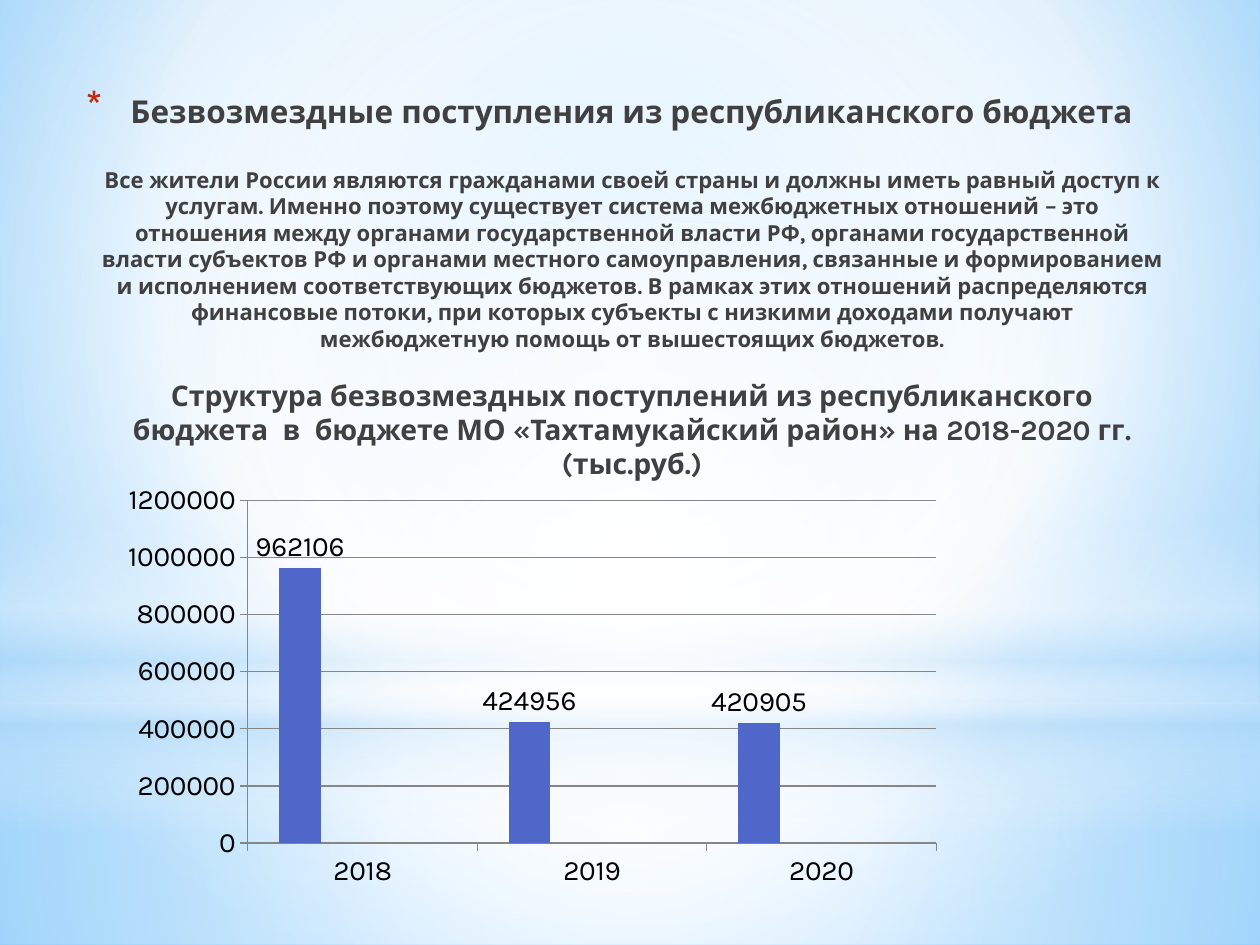
import pptx
import pptx.chart.data
import pptx.dml.color
import pptx.enum.chart
import pptx.enum.shapes
import pptx.enum.text
import pptx.oxml
import pptx.oxml.ns
import pptx.util
from pptx.dml.color import RGBColor
from pptx.util import Inches, Pt

FONT = "Karla"
TEXT = RGBColor(0x40, 0x40, 0x40)
BLACK = RGBColor(0x00, 0x00, 0x00)
AXIS = RGBColor(0x86, 0x86, 0x86)
BULLET = RGBColor(0xC3, 0x26, 0x0C)
WHITE = RGBColor(0xFF, 0xFF, 0xFF)
PALE_BLUE = RGBColor(0xB4, 0xDC, 0xFA)
SKY_BLUE = RGBColor(0x9E, 0xD5, 0xFF)
DEEP_BLUE = RGBColor(0x5B, 0xB9, 0xFF)
SERIES_COLORS = [
    RGBColor(0x4E, 0x67, 0xC8),
    RGBColor(0x5E, 0xCC, 0xF3),
    RGBColor(0xA7, 0xEA, 0x52),
    RGBColor(0x5D, 0xCE, 0xAF),
]
CENTER = (50, 50, 50, 50)


def apply_gradient(fill, element, stops, focus):
    """Fill with (position, colour, opacity) stops in percent.

    focus is the left, top, right, bottom inset of a circular gradient;
    None gives a vertical linear one.
    """
    fill.gradient()
    gradient = next(element.iter(pptx.oxml.ns.qn("a:gradFill")))
    stop_xml = "".join(
        f'<a:gs pos="{position * 1000}"><a:srgbClr val="{color}">'
        f'<a:alpha val="{opacity * 1000}"/></a:srgbClr></a:gs>'
        for position, color, opacity in stops
    )
    if focus:
        left, top, right, bottom = (inset * 1000 for inset in focus)
        direction = (
            f'<a:path path="circle"><a:fillToRect l="{left}" t="{top}" '
            f'r="{right}" b="{bottom}"/></a:path>'
        )
    else:
        direction = '<a:lin ang="5400000" scaled="0"/>'
    replacement = pptx.oxml.parse_xml(
        f'<a:gradFill {pptx.oxml.ns.nsdecls("a")} rotWithShape="1">'
        f"<a:gsLst>{stop_xml}</a:gsLst>{direction}</a:gradFill>"
    )
    gradient.getparent().replace(gradient, replacement)


presentation = pptx.Presentation()
presentation.slide_width = Inches(10)
presentation.slide_height = Inches(7.5)
slide = presentation.slides.add_slide(presentation.slide_layouts[6])

# Background and its soft light layers
apply_gradient(
    slide.background.fill,
    slide.element,
    [(0, SKY_BLUE, 100), (60, WHITE, 100), (100, DEEP_BLUE, 100)],
    (20, 10, 20, 60),
)

RECTANGLE = pptx.enum.shapes.MSO_SHAPE.RECTANGLE
OVAL = pptx.enum.shapes.MSO_SHAPE.OVAL
layers = [
    (RECTANGLE, 5.58, 1.92, CENTER,
     [(0, WHITE, 91), (37, WHITE, 76), (100, PALE_BLUE, 79)]),
    (RECTANGLE, 0, 5.58, CENTER,
     [(0, WHITE, 89), (48, WHITE, 62), (100, PALE_BLUE, 79)]),
    (RECTANGLE, 4.12, 2.5, None,
     [(0, WHITE, 0), (29, WHITE, 30), (45, PALE_BLUE, 40),
      (55, WHITE, 26), (65, PALE_BLUE, 60), (100, WHITE, 0)]),
    (OVAL, 1.75, 5.58, CENTER, [(0, WHITE, 100), (56, WHITE, 0)]),
]
for kind, top, height, focus, stops in layers:
    shape = slide.shapes.add_shape(
        kind, 0, Inches(top), presentation.slide_width, Inches(height)
    )
    shape.shadow.inherit = False
    shape.line.fill.background()
    apply_gradient(shape.fill, shape.element, stops, focus)

# Heading, explanation and chart caption
text_box = slide.shapes.add_textbox(
    Inches(0.35), Inches(0.68), Inches(8.98), Inches(2.04)
)
text_frame = text_box.text_frame
text_frame.word_wrap = True
paragraphs = [
    ("Безвозмездные поступления из республиканского бюджета", 18, 0),
    ("Все жители России являются гражданами своей страны и должны иметь "
     "равный доступ к услугам. Именно поэтому существует система "
     "межбюджетных отношений – это отношения между органами "
     "государственной власти РФ, органами государственной власти субъектов "
     "РФ и органами местного самоуправления, связанные и формированием и "
     "исполнением соответствующих бюджетов. В рамках этих отношений "
     "распределяются финансовые потоки, при которых субъекты с низкими "
     "доходами получают межбюджетную помощь от вышестоящих бюджетов.",
     12.6, 21),
    ("Структура безвозмездных поступлений из республиканского бюджета  в  "
     "бюджете МО «Тахтамукайский район» на 2018-2020 гг. (тыс.руб.)",
     16.2, 15),
]
for index, (text, size, space_before) in enumerate(paragraphs):
    paragraph = text_frame.add_paragraph() if index else text_frame.paragraphs[0]
    paragraph.alignment = pptx.enum.text.PP_ALIGN.CENTER
    paragraph.space_before = Pt(space_before)
    run = paragraph.add_run()
    run.text = text
    font_format = {"name": FONT, "size": Pt(size), "bold": True}
    for name, value in font_format.items():
        setattr(run.font, name, value)
    run.font.color.rgb = TEXT
    properties = paragraph._p.get_or_add_pPr()
    properties.set("marL", str(Inches(0.35)))
    properties.set("indent", "0" if index else str(Inches(-0.35)))

bullet_parts = [
    f'<a:buClr {{}}><a:srgbClr val="{BULLET}"/></a:buClr>',
    '<a:buSzPct {} val="128000"/>',
    '<a:buChar {} char="*"/>',
]
heading_properties = text_frame.paragraphs[0]._p.get_or_add_pPr()
for part in bullet_parts:
    heading_properties.append(
        pptx.oxml.parse_xml(part.format(pptx.oxml.ns.nsdecls("a")))
    )

# Column chart
chart_data = pptx.chart.data.CategoryChartData()
chart_data.categories = ["2018", "2019", "2020"]
chart_data.add_series("Series 1", [962106, 424956, 420905])
for number in range(2, 5):
    chart_data.add_series(f"Series {number}", [None] * 3)
chart = slide.shapes.add_chart(
    pptx.enum.chart.XL_CHART_TYPE.COLUMN_CLUSTERED,
    Inches(0.98), Inches(3.28), Inches(8.66), Inches(3.86), chart_data,
).chart
chart.has_legend = False
chart.has_title = False
chart.font.name = FONT
chart.font.size = Pt(16)
chart.font.color.rgb = BLACK

plot = chart.plots[0]
plot.gap_width = 150
plot.vary_by_categories = False
for series, color in zip(plot.series, SERIES_COLORS):
    series.format.fill.solid()
    series.format.fill.fore_color.rgb = color
labels = plot.series[0].data_labels
label_format = {
    "show_value": True,
    "position": pptx.enum.chart.XL_LABEL_POSITION.OUTSIDE_END,
}
for name, value in label_format.items():
    setattr(labels, name, value)

value_axis = chart.value_axis
value_axis.has_major_gridlines = True
value_axis.minimum_scale = 0
value_axis.maximum_scale = 1200000
value_axis.major_unit = 200000
for axis in (chart.category_axis, value_axis):
    axis.major_tick_mark = pptx.enum.chart.XL_TICK_MARK.OUTSIDE
for line in (
    chart.category_axis.format.line,
    value_axis.format.line,
    value_axis.major_gridlines.format.line,
):
    line.color.rgb = AXIS
    line.width = Pt(0.75)

plot_area = next(chart.element.iter(pptx.oxml.ns.qn("c:plotArea")))
for layout in plot_area.findall(pptx.oxml.ns.qn("c:layout")):
    plot_area.remove(layout)
position_xml = "".join(
    f'<c:{name} val="{value}"/>'
    for name, value in [
        ("layoutTarget", "inner"), ("xMode", "edge"), ("yMode", "edge"),
        ("x", 0.114), ("y", 0.179), ("w", 0.631), ("h", 0.705),
    ]
)
plot_area.insert(0, pptx.oxml.parse_xml(
    f'<c:layout {pptx.oxml.ns.nsdecls("c")}>'
    f"<c:manualLayout>{position_xml}</c:manualLayout></c:layout>"
))

presentation.save("out.pptx")
